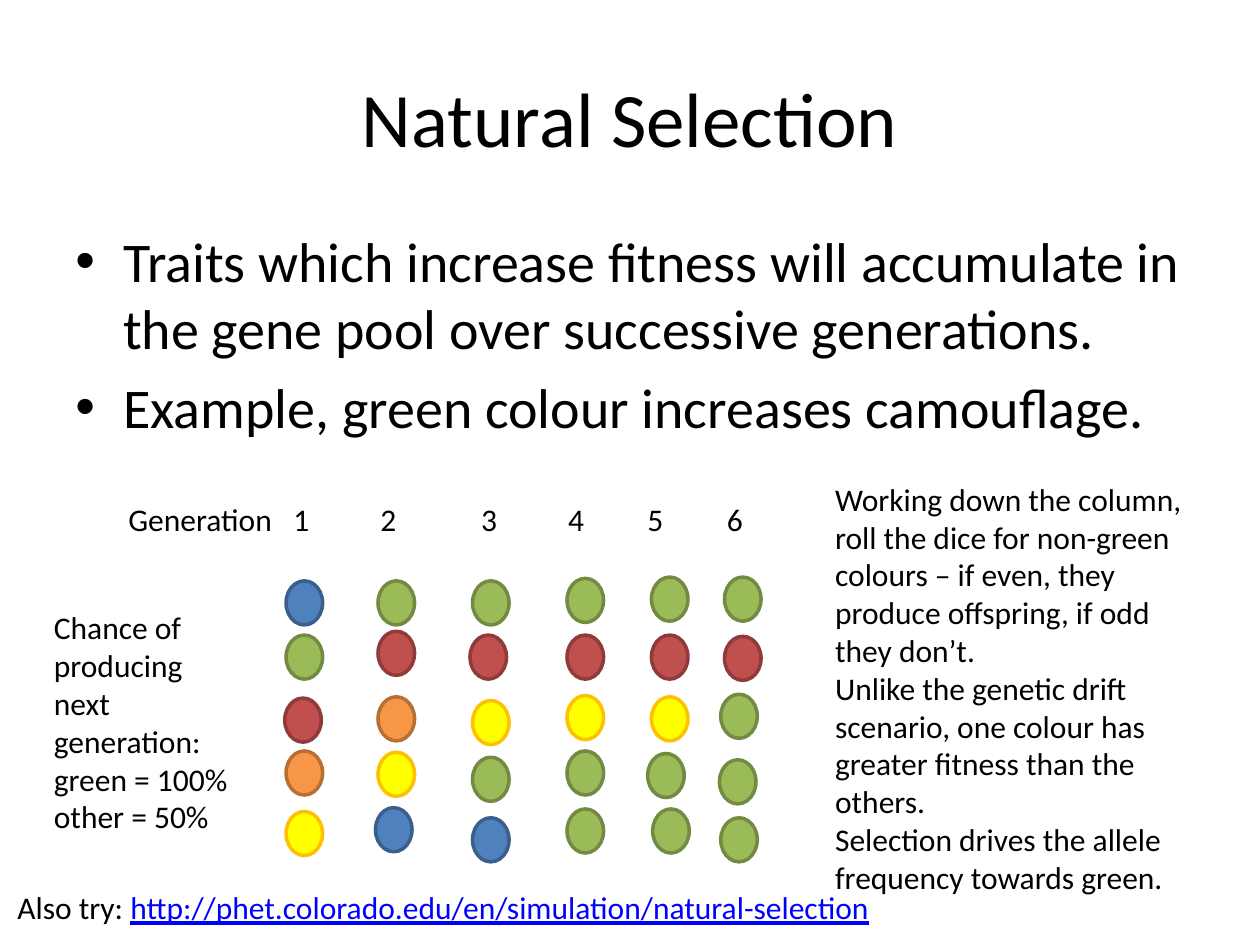
from lxml.etree import SubElement
from pptx import Presentation
from pptx.dml.color import RGBColor
from pptx.enum.shapes import MSO_SHAPE as Shape
from pptx.enum.text import MSO_ANCHOR as Anchor, PP_ALIGN as Align
from pptx.oxml.ns import qn
from pptx.util import Inches, Pt

COLOURS = {
    "text": "000000", "link": "0000FF",
    "blue": "4F81BD", "blue edge": "3A5F8C",
    "green": "9BBB59", "green edge": "738A42",
    "red": "C0504D", "red edge": "8E3B39",
    "orange": "F79646", "orange edge": "B76F34",
    "yellow": "FFFF00", "yellow edge": "FFC000",
}
GENERATIONS = [
    [("blue", 2.27, 4.61), ("green", 2.27, 5.04), ("red", 2.26, 5.54),
     ("orange", 2.27, 5.96), ("yellow", 2.27, 6.44)],
    [("green", 3, 4.61), ("red", 3, 5.01), ("orange", 3, 5.53),
     ("yellow", 3, 5.97), ("blue", 2.98, 6.41)],
    [("green", 3.75, 4.61), ("red", 3.73, 5.04), ("yellow", 3.75, 5.56),
     ("green", 3.75, 6.01), ("blue", 3.75, 6.49)],
    [("green", 4.5, 4.59), ("red", 4.5, 5.04), ("yellow", 4.5, 5.52),
     ("green", 4.5, 5.96), ("green", 4.5, 6.42)],
    [("green", 5.17, 4.58), ("red", 5.17, 5.04), ("yellow", 5.17, 5.53),
     ("green", 5.14, 5.98), ("green", 5.18, 6.42)],
    [("green", 5.75, 4.58), ("red", 5.75, 5.05), ("green", 5.72, 5.51),
     ("green", 5.71, 6.03), ("green", 5.72, 6.49)],
]
NUMBER_STOPS = [1.31, 2, 2.8, 3.49, 4.12, 4.75]


def colour(name):
    return RGBColor.from_string(COLOURS[name])


def style_run(run, size):
    run.font.name = "Calibri"
    run.font.size = Pt(size)
    run.font.color.rgb = colour("text")


def add_text(slide, box, lines, size=18):
    frame = slide.shapes.add_textbox(*map(Inches, box)).text_frame
    frame.word_wrap = True
    frame.text = "\n".join(lines)
    for paragraph in frame.paragraphs:
        for run in paragraph.runs:
            style_run(run, size)
    return frame


def add_title(slide, title):
    frame = add_text(slide, (0.5, 0.3, 9, 1.25), [title], 44)
    frame.vertical_anchor = Anchor.MIDDLE
    frame.paragraphs[0].alignment = Align.CENTER


def add_bullets(slide, box, points):
    frame = add_text(slide, box, points, 32)
    for index, paragraph in enumerate(frame.paragraphs):
        if index:
            paragraph.space_before = Pt(6.4)
        properties = paragraph._p.get_or_add_pPr()
        properties.set("marL", str(Inches(0.38)))
        properties.set("indent", str(Inches(-0.38)))
        SubElement(properties, qn("a:buFont"), typeface="Arial")
        SubElement(properties, qn("a:buChar"), char="•")


def add_generation_header(slide):
    numbers = [str(number + 1) for number in range(len(GENERATIONS))]
    frame = add_text(slide, (0.92, 3.92, 5.31, 0.4), ["\t".join(["Generation"] + numbers)])
    stops = SubElement(frame.paragraphs[0]._p.get_or_add_pPr(), qn("a:tabLst"))
    for stop in NUMBER_STOPS:
        SubElement(stops, qn("a:tab"), pos=str(Inches(stop)), algn="l")


def add_individual(slide, trait, left, top):
    individual = slide.shapes.add_shape(
        Shape.OVAL, Inches(left), Inches(top), Inches(0.29), Inches(0.35))
    individual.shadow.inherit = False
    individual.fill.solid()
    individual.fill.fore_color.rgb = colour(trait)
    individual.line.color.rgb = colour(trait + " edge")
    individual.line.width = Pt(2)


def add_web_reference(slide, lead, address):
    frame = add_text(slide, (0.04, 7, 7.73, 0.4), [lead])
    link = frame.paragraphs[0].add_run()
    link.text = address
    style_run(link, 18)
    link.font.color.rgb = colour("link")
    link.font.underline = True


def main():
    """Build the natural selection slide."""
    deck = Presentation()
    deck.slide_width, deck.slide_height = Inches(10), Inches(7.5)
    slide = deck.slides.add_slide(deck.slide_layouts[6])
    add_title(slide, "Natural Selection")
    add_bullets(slide, (0.5, 1.75, 9, 4.95), [
        "Traits which increase fitness will accumulate in the gene pool over successive generations.",
        "Example, green colour increases camouflage.",
    ])
    add_generation_header(slide)
    for generation in GENERATIONS:
        for trait, left, top in generation:
            add_individual(slide, trait, left, top)
    add_text(slide, (0.33, 4.78, 1.67, 1.92), [
        "Chance of producing next generation:", "green = 100%", "other = 50%",
    ])
    add_text(slide, (6.53, 3.76, 3.17, 3.43), [
        "Working down the column, roll the dice for non-green colours – if even, "
        "they produce offspring, if odd they don’t.",
        "Unlike the genetic drift scenario, one colour has greater fitness than the others.",
        "Selection drives the allele frequency towards green.",
    ])
    add_web_reference(slide, "Also try: ",
                      "http://phet.colorado.edu/en/simulation/natural-selection")
    deck.save("out.pptx")


if __name__ == "__main__":
    main()
